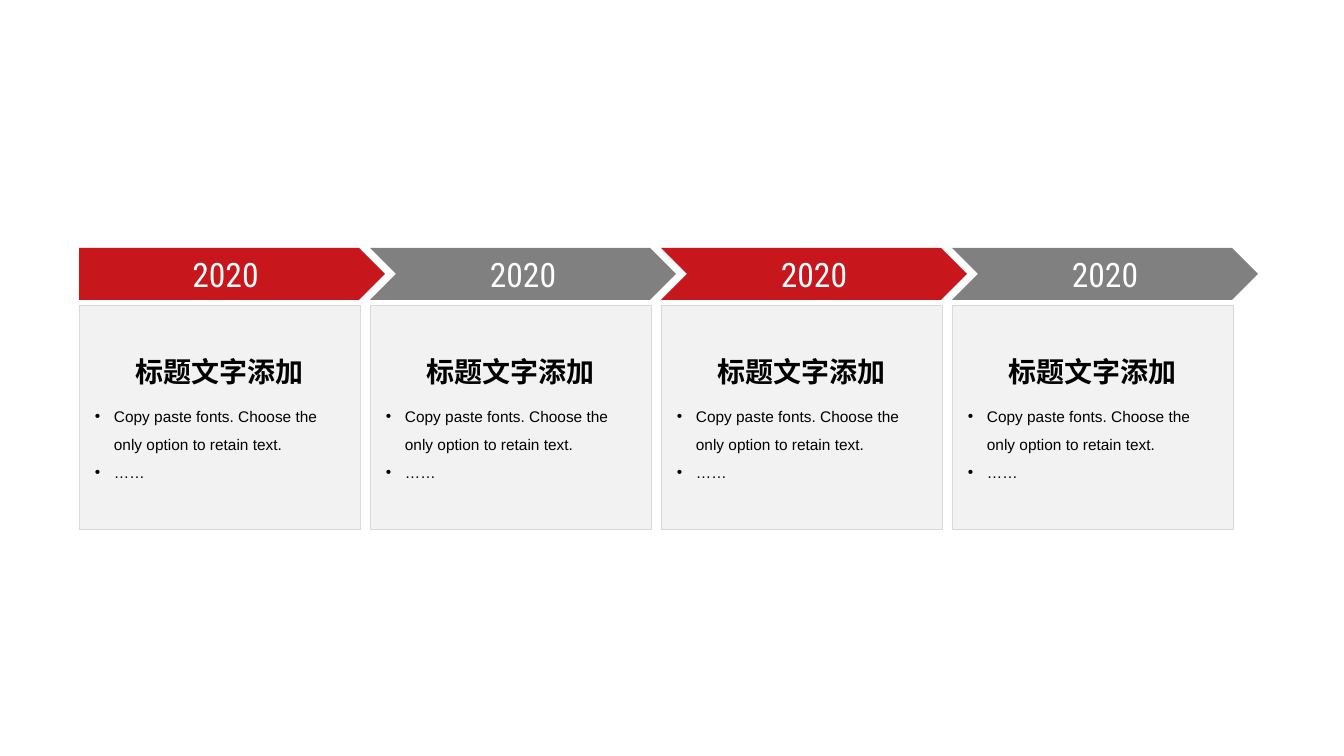
"""Build a four-step timeline slide with arrow headers above text cards."""
from lxml.etree import SubElement
from pptx import Presentation
from pptx.dml.color import RGBColor
from pptx.enum.shapes import MSO_SHAPE
from pptx.enum.text import MSO_ANCHOR, PP_ALIGN
from pptx.oxml.ns import qn
from pptx.util import Emu, Pt

BULLETS = ["Copy paste fonts. Choose the only option to retain text.", "……"]
STEPS = [
    ("2020", "标题文字添加", BULLETS, "C8161D"),
    ("2020", "标题文字添加", BULLETS, "808080"),
    ("2020", "标题文字添加", BULLETS, "C8161D"),
    ("2020", "标题文字添加", BULLETS, "808080"),
]

SLIDE_W, SLIDE_H = 1344, 756
LEFT, PITCH = 79, 291
ARROW_Y, ARROW_W, ARROW_H = 248, 306, 52
CARD_Y, CARD_W, CARD_H = 305, 281, 224
PAD = 6
TITLE_Y, TITLE_H = 345, 48
BODY_Y, BODY_H = TITLE_Y + TITLE_H, 96
INDENT = 19


def px(n):
    return Emu(round(n * 12192000 / SLIDE_W))


def rgb(color):
    return RGBColor.from_string(color)


def add_box(slide, kind, x, y, w, h, fill, line=None):
    sp = slide.shapes.add_shape(kind, px(x), px(y), px(w), px(h))
    sp.shadow.inherit = False
    sp.fill.solid()
    sp.fill.fore_color.rgb = rgb(fill)
    if line:
        sp.line.color.rgb = rgb(line)
        sp.line.width = Pt(0.25)
    else:
        sp.line.fill.background()
    return sp


def add_text_box(slide, x, y, w, h):
    sp = slide.shapes.add_textbox(px(x), px(y), px(w), px(h))
    sp.text_frame.word_wrap = True
    return sp.text_frame


def add_run(p, text, size, font, color, bold=False):
    r = p.add_run()
    r.text = text
    r.font.size = Pt(size)
    r.font.name = font
    r.font.bold = bold
    r.font.color.rgb = rgb(color)


def set_bullet(p):
    p.line_spacing = 1.5
    pPr = p._p.get_or_add_pPr()
    pPr.set("marL", str(px(INDENT)))
    pPr.set("indent", str(-px(INDENT)))
    SubElement(pPr, qn("a:buFont")).set("typeface", "Arial")
    SubElement(pPr, qn("a:buChar")).set("char", "•")


def add_step(slide, i, year, title, bullets, color):
    x = LEFT + i * PITCH
    kind = MSO_SHAPE.CHEVRON if i else MSO_SHAPE.PENTAGON
    arrow = add_box(slide, kind, x, ARROW_Y, ARROW_W, ARROW_H, color)
    tf = arrow.text_frame
    tf.vertical_anchor = MSO_ANCHOR.MIDDLE
    tf.paragraphs[0].alignment = PP_ALIGN.CENTER
    add_run(tf.paragraphs[0], year, 24, "Roboto Condensed", "FFFFFF")

    add_box(slide, MSO_SHAPE.RECTANGLE, x, CARD_Y, CARD_W, CARD_H, "F2F2F2", "D9D9D9")
    text_w = CARD_W - 2 * PAD
    tf = add_text_box(slide, x + PAD, TITLE_Y, text_w, TITLE_H)
    tf.vertical_anchor = MSO_ANCHOR.BOTTOM
    tf.paragraphs[0].alignment = PP_ALIGN.CENTER
    add_run(tf.paragraphs[0], title, 20, "Arial", "000000", True)

    tf = add_text_box(slide, x + PAD, BODY_Y, text_w, BODY_H)
    for j, text in enumerate(bullets):
        p = tf.add_paragraph() if j else tf.paragraphs[0]
        set_bullet(p)
        add_run(p, text, 11, "Arial", "000000")


def main():
    prs = Presentation()
    prs.slide_width, prs.slide_height = px(SLIDE_W), px(SLIDE_H)
    slide = prs.slides.add_slide(prs.slide_layouts[6])
    for i, step in enumerate(STEPS):
        add_step(slide, i, *step)
    prs.save("out.pptx")


if __name__ == "__main__":
    main()
